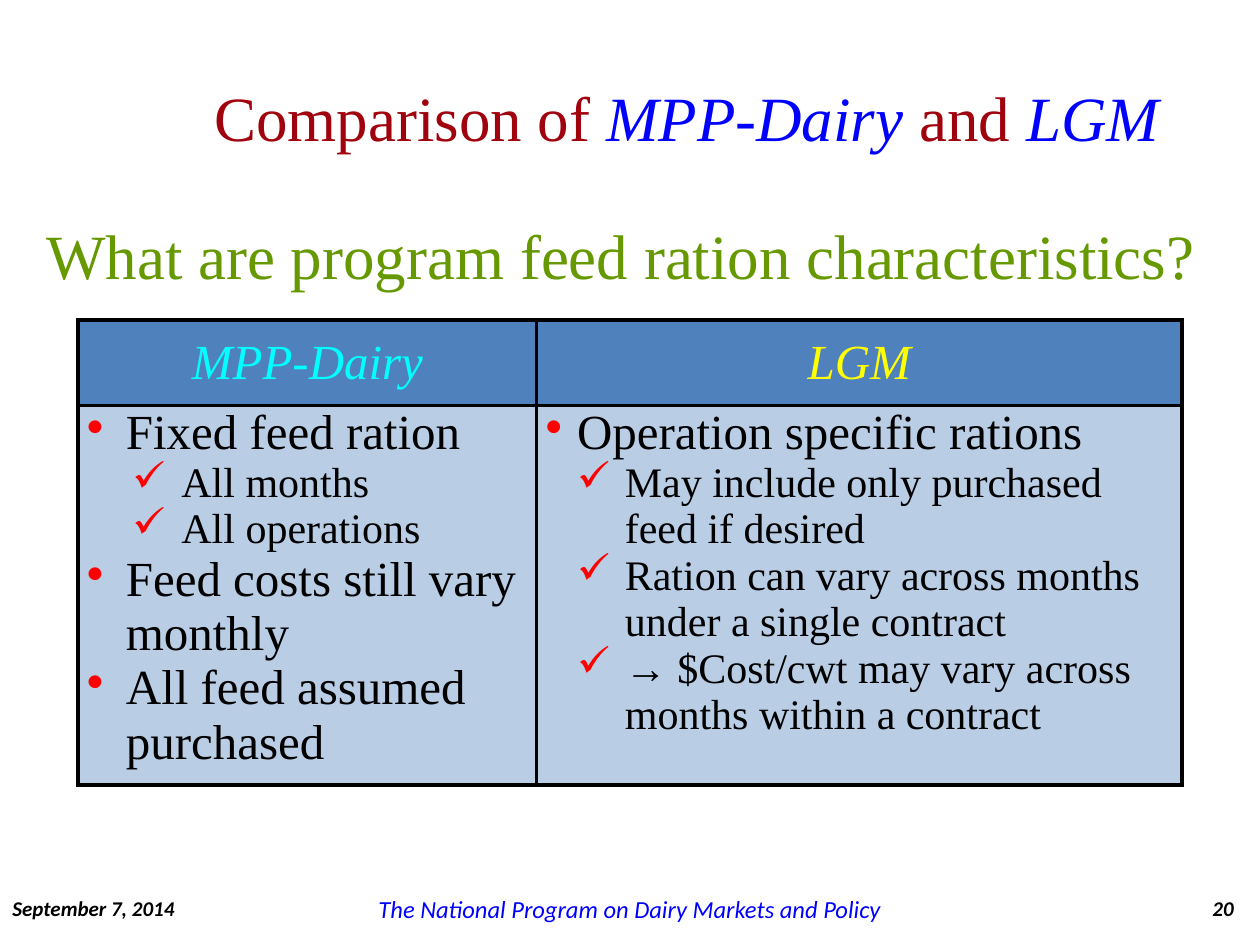
from dataclasses import dataclass

from lxml.etree import SubElement
from pptx import Presentation
from pptx.dml.color import RGBColor
from pptx.enum.text import MSO_ANCHOR as Anchor, PP_ALIGN as Align
from pptx.oxml import parse_xml
from pptx.oxml.ns import nsdecls, qn
from pptx.util import Inches, Pt


@dataclass(frozen=True)
class Theme:
    serif: str = "Times New Roman"
    sans: str = "Calibri"
    crimson: str = "A0020E"
    blue: str = "0000FF"
    green: str = "669900"
    cyan: str = "00FFFF"
    yellow: str = "FFFF00"
    black: str = "000000"
    bullet: str = "FF0000"
    header_fill: str = "4F81BD"
    body_fill: str = "B9CDE5"
    heading: float = 36
    large: float = 28
    medium: float = 24
    footer: float = 14
    small: float = 12
    border: float = 2.25


@dataclass(frozen=True)
class Style:
    size: float
    color: str
    font: str
    italic: bool = False
    bold: bool = False


@dataclass(frozen=True)
class Label:
    text: str
    box: tuple[float, float, float, float]
    style: Style
    align: Align = Align.LEFT
    anchor: Anchor = Anchor.MIDDLE
    wrap: bool = True


@dataclass(frozen=True)
class Bullet:
    char: str
    margin: float
    hang: float
    size: float


@dataclass(frozen=True)
class Program:
    name: str
    color: str
    width: float
    point: Bullet
    detail: Bullet
    items: tuple[tuple[int, str], ...]


T = Theme()
FOOTER_TOP, FOOTER_HEIGHT = 7.09, 0.24
HEADER_HEIGHT, BODY_HEIGHT = 0.68, 3.01

TITLE = (
    ("Comparison of ", Style(T.heading, T.crimson, T.serif)),
    ("MPP-Dairy ", Style(T.heading, T.blue, T.serif, italic=True)),
    ("and ", Style(T.heading, T.crimson, T.serif)),
    ("LGM", Style(T.heading, T.blue, T.serif, italic=True)),
)
NOTE = Style(T.small, T.black, T.sans, italic=True, bold=True)
LABELS = (
    Label("What are program feed ration characteristics?", (0.27, 1.67, 9.42, 0.71),
          Style(T.heading, T.green, T.serif), anchor=Anchor.TOP, wrap=False),
    Label("September 7, 2014", (0, FOOTER_TOP, 1.53, FOOTER_HEIGHT), NOTE),
    Label("The National Program on Dairy Markets and Policy",
          (2.88, FOOTER_TOP, 4.24, FOOTER_HEIGHT),
          Style(T.footer, T.blue, T.sans, italic=True), Align.CENTER),
    Label("20", (9.11, FOOTER_TOP, 0.78, FOOTER_HEIGHT), NOTE, Align.RIGHT),
)
# Item levels: 0 is a main point, 1 a detail.
PROGRAMS = (
    Program("MPP-Dairy", T.cyan, 3.64,
            Bullet("•", 0.31, 0.31, T.large), Bullet("✓", 0.75, 0.39, T.medium),
            ((0, "Fixed feed ration"),
             (1, "All months"),
             (1, "All operations"),
             (0, "Feed costs still vary monthly"),
             (0, "All feed assumed purchased"))),
    Program("LGM", T.yellow, 5.12,
            Bullet("•", 0.25, 0.25, T.large), Bullet("✓", 0.63, 0.38, T.medium),
            ((0, "Operation specific rations"),
             (1, "May include only purchased feed if desired"),
             (1, "Ration can vary across months under a single contract"),
             (1, "→ $Cost/cwt may vary across months within a contract"))),
)


def add_run(p, text: str, style: Style) -> None:
    r = p.add_run()
    r.text = text
    r.font.name = style.font
    r.font.size = Pt(style.size)
    r.font.bold = style.bold
    r.font.italic = style.italic
    r.font.color.rgb = RGBColor.from_string(style.color)


def add_title(slide) -> None:
    sp = slide.shapes.title
    sp.left, sp.top, sp.width, sp.height = map(Inches, (1.4, 0.3, 8.1, 1.25))
    sp.text_frame.vertical_anchor = Anchor.MIDDLE
    p = sp.text_frame.paragraphs[0]
    p.alignment = Align.CENTER
    for text, style in TITLE:
        add_run(p, text, style)


def add_label(slide, label: Label) -> None:
    tf = slide.shapes.add_textbox(*map(Inches, label.box)).text_frame
    tf.word_wrap = label.wrap
    tf.vertical_anchor = label.anchor
    p = tf.paragraphs[0]
    p.alignment = label.align
    add_run(p, label.text, label.style)


def set_bullet(p, bullet: Bullet) -> None:
    pPr = p._p.get_or_add_pPr()
    pPr.set("marL", str(Inches(bullet.margin)))
    pPr.set("indent", str(-Inches(bullet.hang)))
    color = SubElement(pPr, qn("a:buClr"))
    SubElement(color, qn("a:srgbClr")).set("val", T.bullet)
    SubElement(pPr, qn("a:buChar")).set("char", bullet.char)


def format_cell(cell, fill: str, anchor: Anchor) -> None:
    """Set fill, margins, anchor and a border on all four sides."""
    cell.fill.solid()
    cell.fill.fore_color.rgb = RGBColor.from_string(fill)
    cell.margin_left = cell.margin_right = Inches(0.07)
    cell.margin_top = cell.margin_bottom = 0
    cell.vertical_anchor = anchor
    tcPr = cell._tc.get_or_add_tcPr()
    for i, side in enumerate("LRTB"):
        tcPr.insert(i, parse_xml(
            f'<a:ln{side} {nsdecls("a")} w="{Pt(T.border)}"><a:solidFill>'
            f'<a:srgbClr val="{T.black}"/></a:solidFill></a:ln{side}>'))


def fill_column(table, col: int, program: Program) -> None:
    table.columns[col].width = Inches(program.width)
    header, body = table.cell(0, col), table.cell(1, col)
    format_cell(header, T.header_fill, Anchor.MIDDLE)
    p = header.text_frame.paragraphs[0]
    p.alignment = Align.CENTER
    add_run(p, program.name, Style(T.large, program.color, T.serif, italic=True))

    format_cell(body, T.body_fill, Anchor.TOP)
    tf = body.text_frame
    for i, (level, text) in enumerate(program.items):
        p = tf.add_paragraph() if i else tf.paragraphs[0]
        bullet = program.detail if level else program.point
        set_bullet(p, bullet)
        add_run(p, text, Style(bullet.size, T.black, T.serif))


def add_comparison(slide) -> None:
    width = sum(program.width for program in PROGRAMS)
    box = (0.62, 2.54, width, HEADER_HEIGHT + BODY_HEIGHT)
    table = slide.shapes.add_table(2, len(PROGRAMS), *map(Inches, box)).table
    for row, height in zip(table.rows, (HEADER_HEIGHT, BODY_HEIGHT)):
        row.height = Inches(height)
    for col, program in enumerate(PROGRAMS):
        fill_column(table, col, program)


def main() -> None:
    prs = Presentation()
    prs.slide_width, prs.slide_height = Inches(10), Inches(7.5)
    slide = prs.slides.add_slide(prs.slide_layouts.get_by_name("Title Only"))
    add_title(slide)
    add_comparison(slide)
    for label in LABELS:
        add_label(slide, label)
    prs.save("out.pptx")


if __name__ == "__main__":
    main()
